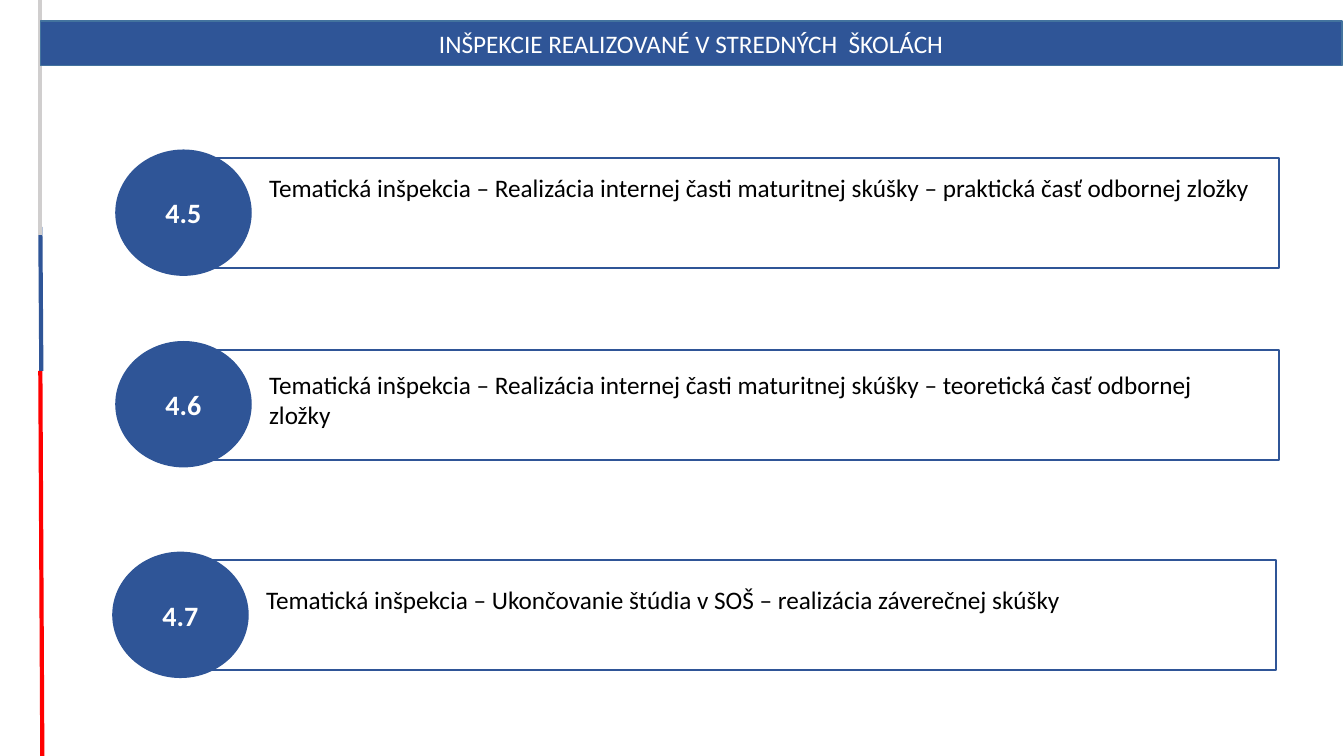
from pptx import Presentation
from pptx.dml.color import RGBColor
from pptx.enum import shapes, text
from pptx.oxml.ns import qn
from pptx.util import Inches, Pt
from lxml import etree

# Content
TITLE = "INŠPEKCIE REALIZOVANÉ V STREDNÝCH  ŠKOLÁCH"
# number, text, left and top of circle, offset and width of text
ITEMS = [
    ("4.5", "Tematická inšpekcia – Realizácia internej časti maturitnej skúšky"
     " – praktická časť odbornej zložky", 1.15, 1.49, 0.17, 9.95, 0.4),
    ("4.6", "Tematická inšpekcia – Realizácia internej časti maturitnej skúšky"
     " – teoretická časť odbornej zložky", 1.15, 3.39, 0.22, 9.95, 0.71),
    ("4.7", "Tematická inšpekcia – Ukončovanie štúdia v SOŠ"
     " – realizácia záverečnej skúšky", 1.12, 5.48, 0.27, 9.71, 0.71),
]
BLUE, WHITE = "2F5597", "FFFFFF"
# x1, y1, x2, y2, colour
BARS = [
    (0.42, 7.5, 0.4, 3.68, "FF0000"),
    (0.41, 3.68, 0.4, 2.25, BLUE),
    (0.4, 2.33, 0.4, 0, "D0CECE"),
]
HEAD = {"size": Pt(18), "bold": False, "name": "Calibri"}
NUM = {"size": Pt(20), "bold": True, "name": "Calibri"}
RECT = shapes.MSO_SHAPE.RECTANGLE
OVAL = shapes.MSO_SHAPE.OVAL


def paint(form, color):
    form.rgb = RGBColor.from_string(color)


def write(frame, words, style, color, align):
    frame.word_wrap = True
    para = frame.paragraphs[0]
    para.alignment = align
    run = para.add_run()
    run.text = words
    for key, val in style.items():
        setattr(run.font, key, val)
    paint(run.font.color, color)


def block(home, kind, box, fill, edge, width, words="", style=HEAD):
    shape = home.add_shape(kind, *map(Inches, box))
    shape.shadow.inherit = False
    shape.fill.solid()
    paint(shape.fill.fore_color, fill)
    paint(shape.line.color, edge)
    shape.line.width = Pt(width)
    if words:
        shape.text_frame.vertical_anchor = text.MSO_ANCHOR.MIDDLE
        write(shape.text_frame, words, style, WHITE, text.PP_ALIGN.CENTER)


deck = Presentation()
deck.slide_width, deck.slide_height = Inches(13.33), Inches(7.5)
slide = deck.slides.add_slide(deck.slide_layouts[6])

# Tricolour bar on the left
side = slide.shapes.add_group_shape().shapes
for *ends, color in BARS:
    bar = side.add_connector(shapes.MSO_CONNECTOR.STRAIGHT, *map(Inches, ends))
    paint(bar.line.color, color)
    bar.line.width = Pt(3)
    etree.SubElement(bar._element.spPr, qn("a:effectLst"))

# Title band
block(slide.shapes, RECT, (0.4, 0.21, 12.91, 0.44), BLUE, "43739E", 1, TITLE)

# Numbered items
for num, words, left, top, drop, wide, high in ITEMS:
    item = slide.shapes.add_group_shape().shapes
    block(item, RECT, (left + 0.96, top + 0.08, 10.58, 1.09), WHITE, BLUE, 1.5)
    block(item, OVAL, (left, top, 1.34, 1.24), BLUE, BLUE, 1, num, NUM)
    note = item.add_textbox(*map(Inches, (left + 1.42, top + drop, wide, high)))
    write(note.text_frame, words, HEAD, "000000", text.PP_ALIGN.LEFT)

deck.save("out.pptx")
